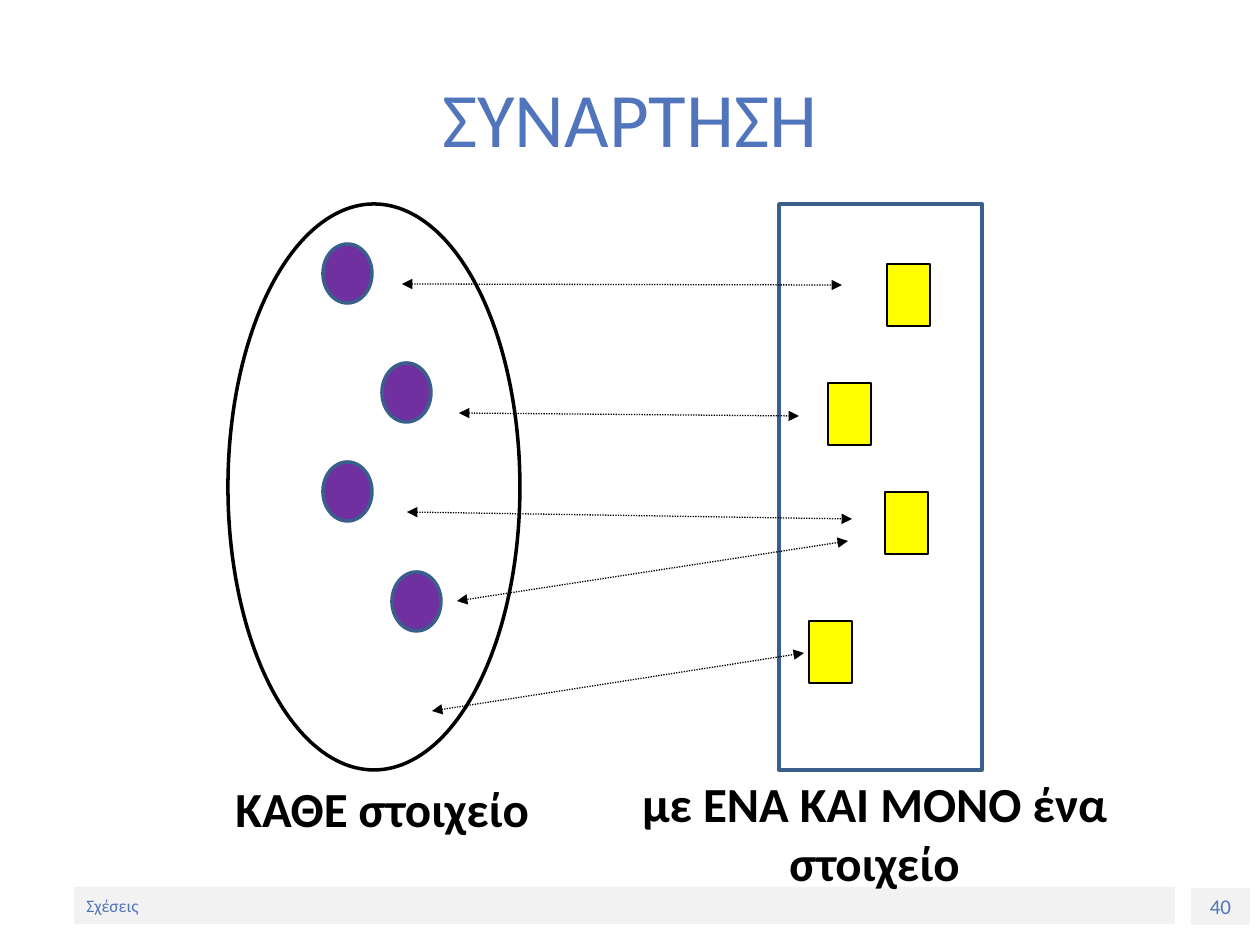
from dataclasses import dataclass

from lxml.etree import SubElement
from pptx import Presentation
from pptx.dml.color import RGBColor
from pptx.enum.dml import MSO_LINE
from pptx.enum.shapes import MSO_CONNECTOR, MSO_SHAPE
from pptx.enum.text import MSO_ANCHOR, PP_ALIGN
from pptx.oxml.ns import qn
from pptx.util import Pt

EMU_PER_PX = 914400 / 126


@dataclass(frozen=True)
class Theme:
    """Colours, font and type sizes of the slide."""
    font: str = "Calibri"
    accent: str = "5075BC"
    ink: str = "000000"
    outline: str = "3A5F8C"
    band: str = "F2F2F2"
    domain_item: str = "7030A0"
    range_item: str = "FFFF00"
    title_size: int = 44
    label_size: int = 28
    number_size: int = 12
    footer_size: int = 10


THEME = Theme()


def px(*lengths):
    """Turn pixel lengths into EMU."""
    return [round(length * EMU_PER_PX) for length in lengths]


def rgb(colour):
    """Turn a hex string into a colour."""
    return RGBColor.from_string(colour)


def write(holder, wording, size, colour, align=PP_ALIGN.LEFT, bold=False):
    """Put formatted, vertically centred text in a shape."""
    frame = holder.text_frame
    frame.text = wording
    frame.word_wrap = True
    frame.vertical_anchor = MSO_ANCHOR.MIDDLE
    paragraph = frame.paragraphs[0]
    paragraph.alignment = align
    font = paragraph.runs[0].font
    font.name, font.size, font.bold = THEME.font, Pt(size), bold
    font.color.rgb = rgb(colour)


def add_figure(slide, preset, box, fill=None, outline=None, weight=2):
    """Add a preset shape with optional fill and outline."""
    figure = slide.shapes.add_shape(preset, *px(*box))
    figure.shadow.inherit = False
    if fill:
        figure.fill.solid()
        figure.fill.fore_color.rgb = rgb(fill)
    else:
        figure.fill.background()
    if outline:
        figure.line.color.rgb = rgb(outline)
        figure.line.width = Pt(weight)
    else:
        figure.line.fill.background()
    return figure


def add_mapping(slide, start, end):
    """Add a dotted double-headed arrow between two points."""
    arrow = slide.shapes.add_connector(MSO_CONNECTOR.STRAIGHT, *px(*start, *end))
    arrow.line.color.rgb = rgb(THEME.ink)
    arrow.line.width = Pt(0.75)
    arrow.line.dash_style = MSO_LINE.ROUND_DOT
    properties = arrow.line._get_or_add_ln()
    for tip in ("a:headEnd", "a:tailEnd"):
        SubElement(properties, qn(tip), type="triangle")
    SubElement(arrow._element.spPr, qn("a:effectLst"))


def add_label(slide, wording, box, align):
    """Add a bold caption below a set."""
    label = slide.shapes.add_textbox(*px(*box))
    write(label, wording, THEME.label_size, THEME.ink, align, bold=True)


def add_band(slide, wording, box, size, align):
    """Add a grey footer band."""
    band = add_figure(slide, MSO_SHAPE.RECTANGLE, box, THEME.band)
    write(band, wording, size, THEME.accent, align)


def add_title(slide, wording):
    """Place and format the title placeholder."""
    title = slide.shapes.title
    title.left, title.top, title.width, title.height = px(63, 38, 1134, 158)
    write(title, wording, THEME.title_size, THEME.accent, PP_ALIGN.CENTER)


def main():
    """Build the slide and save it."""
    deck = Presentation()
    deck.slide_width, deck.slide_height = px(1260, 945)
    slide = deck.slides.add_slide(deck.slide_layouts[5])

    add_band(slide, "40", (1191, 888, 59, 37), THEME.number_size, PP_ALIGN.CENTER)
    add_band(slide, "Σχέσεις", (74, 887, 1101, 37), THEME.footer_size, PP_ALIGN.LEFT)
    add_title(slide, "ΣΥΝΑΡΤΗΣΗ")

    add_figure(slide, MSO_SHAPE.OVAL, (228, 204, 292, 566), outline=THEME.ink)
    for corner in ((323, 244), (382, 363), (323, 462), (392, 572)):
        add_figure(slide, MSO_SHAPE.OVAL, (*corner, 49, 59),
                   THEME.domain_item, THEME.outline)

    add_figure(slide, MSO_SHAPE.RECTANGLE, (779, 204, 203, 566), outline=THEME.outline)
    for corner in ((887, 264), (828, 383), (885, 492), (809, 621)):
        add_figure(slide, MSO_SHAPE.RECTANGLE, (*corner, 43, 62),
                   THEME.range_item, THEME.ink, weight=1)

    mappings = (
        ((402, 284), (842, 285)),
        ((459, 413), (799, 416)),
        ((407, 512), (852, 519)),
        ((432, 711), (804, 653)),
        ((848, 541), (457, 601)),
    )
    for start, end in mappings:
        add_mapping(slide, start, end)

    add_label(slide, "ΚΑΘΕ στοιχείο", (223, 756, 357, 103), PP_ALIGN.LEFT)
    add_label(slide, "με ΕΝΑ ΚΑΙ ΜΟΝΟ ένα στοιχείο", (581, 781, 587, 103),
              PP_ALIGN.CENTER)
    deck.save("out.pptx")


if __name__ == "__main__":
    main()
